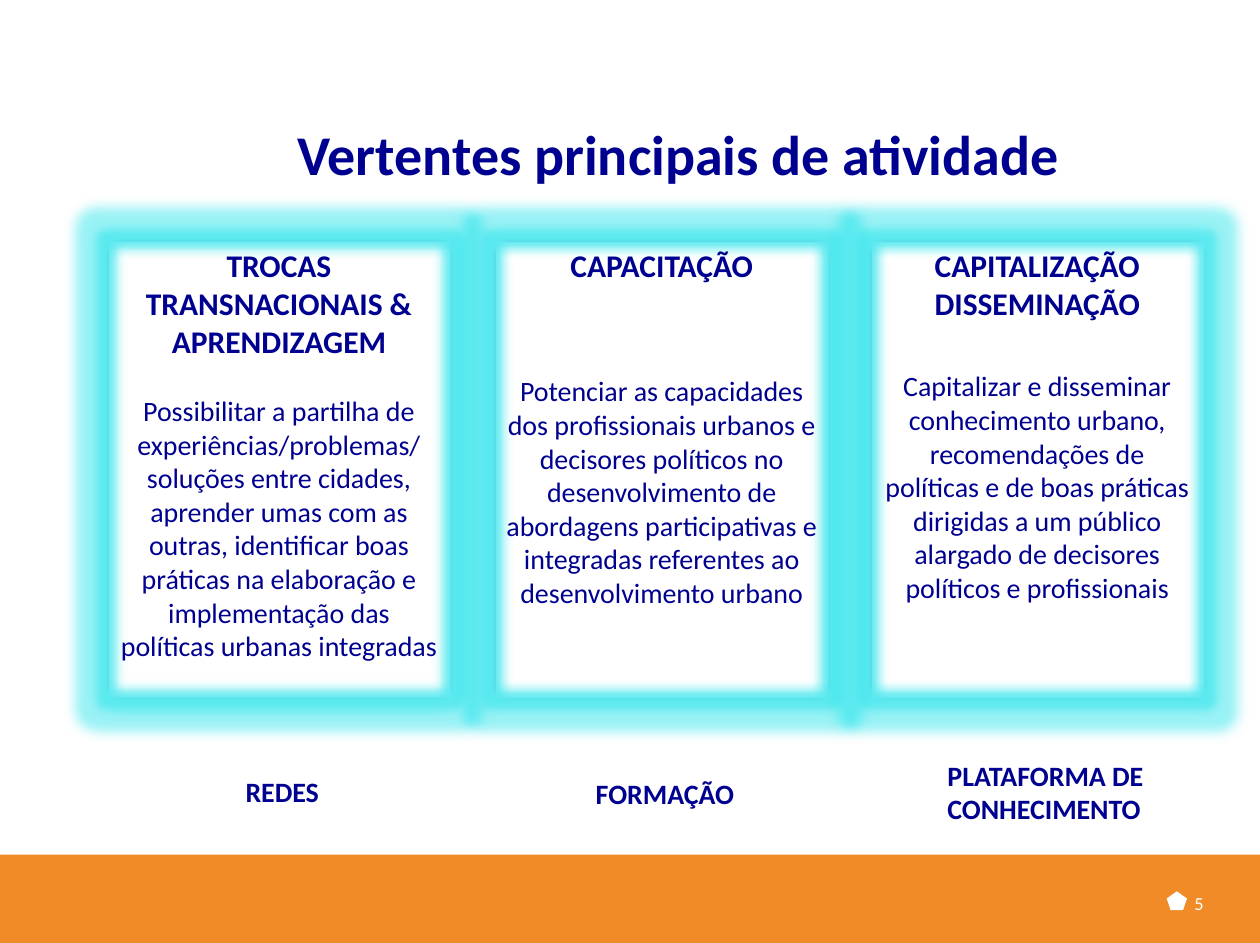
import pptx
import pptx.util
import pptx.dml.color
import pptx.enum.shapes
import pptx.enum.text
import pptx.oxml
import pptx.oxml.ns
from dataclasses import dataclass

Cm = pptx.util.Cm
Pt = pptx.util.Pt
SHAPE = pptx.enum.shapes.MSO_SHAPE
ALIGN = pptx.enum.text.PP_ALIGN
ANCHOR = pptx.enum.text.MSO_ANCHOR


@dataclass(frozen=True)
class Theme:
    font: str = "Calibri"
    navy: str = "000090"
    orange: str = "F08B27"
    white: str = "FFFFFF"
    glow: str = "00DFE8"
    border: str = "1E1E87"
    title: float = 32
    heading: float = 18
    body: float = 16
    number: float = 10.5


THEME = Theme()

# Heading lines, body paragraphs, gap before the body (pt), left and width (cm)
STRANDS = [
    (["TROCAS TRANSNACIONAIS & APRENDIZAGEM"],
     ["Possibilitar a partilha de experiências/problemas/",
      "soluções entre cidades, aprender umas com as outras, identificar boas "
      "práticas na elaboração e implementação das políticas urbanas integradas"],
     19.5, 2.16, 6.93),
    (["CAPACITAÇÃO"],
     ["Potenciar as capacidades dos profissionais urbanos e decisores políticos "
      "no desenvolvimento de abordagens participativas e integradas referentes "
      "ao desenvolvimento urbano"],
     51.5, 9.96, 6.76),
    (["CAPITALIZAÇÃO", "DISSEMINAÇÃO"],
     ["Capitalizar e disseminar conhecimento urbano, recomendações de políticas "
      "e de boas práticas dirigidas a um público alargado de decisores políticos "
      "e profissionais"],
     27, 17.53, 6.76),
]

# Text, left, top, width, height (cm), wraps
OUTCOMES = [
    ("REDES", 4.7, 15.47, 2.01, 0.94, False),
    ("FORMAÇÃO", 11.76, 15.52, 3.35, 0.94, False),
    ("PLATAFORMA DE CONHECIMENTO", 18.85, 15.14, 5.23, 1.63, True),
]


def rgb(value):
    return pptx.dml.color.RGBColor.from_string(value)


def style(paragraph, size, color, bold=False, align=ALIGN.LEFT):
    paragraph.alignment = align
    font = paragraph.font
    font.name, font.size, font.bold = THEME.font, Pt(size), bold
    font.color.rgb = rgb(color)


def add_filled(slide, preset, left, top, width, height, color):
    shape = slide.shapes.add_shape(preset, Cm(left), Cm(top), Cm(width), Cm(height))
    shape.shadow.inherit = False
    shape.fill.solid()
    shape.fill.fore_color.rgb = rgb(color)
    shape.line.fill.background()
    return shape


def add_glow(shape, radius, soft_edge):
    """Put a cyan glow behind the shape and fade its own edge."""
    properties = shape.element.spPr
    properties.remove(properties.find(pptx.oxml.ns.qn("a:effectLst")))
    properties.append(pptx.oxml.parse_xml(
        f'<a:effectLst {pptx.oxml.ns.nsdecls("a")}>'
        f'<a:glow rad="{Pt(radius)}"><a:srgbClr val="{THEME.glow}">'
        f'<a:alpha val="40000"/></a:srgbClr></a:glow>'
        f'<a:softEdge rad="{Pt(soft_edge)}"/></a:effectLst>'))


def add_label(slide, text, left, top, width, height, size, color, bold=True,
              align=ALIGN.LEFT, anchor=ANCHOR.TOP, wrap=True, inset=True):
    label = slide.shapes.add_textbox(Cm(left), Cm(top), Cm(width), Cm(height))
    frame = label.text_frame
    frame.word_wrap = wrap
    frame.vertical_anchor = anchor
    if not inset:
        frame.margin_left = frame.margin_right = 0
        frame.margin_top = frame.margin_bottom = 0
    frame.text = text
    style(frame.paragraphs[0], size, color, bold, align)


def add_strand(slide, headings, body, gap, left, width):
    card = add_filled(slide, SHAPE.RECTANGLE, left, 4.83, width, 9.25, THEME.white)
    card.line.color.rgb = rgb(THEME.border)
    card.line.width = Pt(2)
    add_glow(card, radius=14, soft_edge=6)
    frame = card.text_frame
    frame.word_wrap = True
    frame.vertical_anchor = ANCHOR.TOP
    frame.text = "\n".join(headings + body)
    for index, paragraph in enumerate(frame.paragraphs):
        is_heading = index < len(headings)
        style(paragraph, THEME.heading if is_heading else THEME.body,
              THEME.navy, is_heading, ALIGN.CENTER)
    frame.paragraphs[len(headings)].space_before = Pt(gap)


def add_footer(slide):
    add_filled(slide, SHAPE.RECTANGLE, 0, 17.22, 25.5, 1.78, THEME.orange)
    add_filled(slide, SHAPE.REGULAR_PENTAGON, 23.52, 17.96, 0.41, 0.38, THEME.white)
    add_label(slide, "5", 24.08, 17.68, 1.02, 1.02, THEME.number, THEME.white,
              bold=False, anchor=ANCHOR.MIDDLE, inset=False)


def main():
    deck = pptx.Presentation()
    deck.slide_width, deck.slide_height = Cm(25.4), Cm(19)
    slide = deck.slides.add_slide(deck.slide_layouts[6])

    # Footer band with the page number
    add_footer(slide)

    # Three strands of activity
    for strand in STRANDS:
        add_strand(slide, *strand)

    # What each strand leads to
    for text, left, top, width, height, wrap in OUTCOMES:
        add_label(slide, text, left, top, width, height, THEME.body, THEME.navy,
                  anchor=ANCHOR.MIDDLE, wrap=wrap)

    # Title
    add_label(slide, "Vertentes principais de atividade", 2.77, 2.41, 21.82, 1.37,
              THEME.title, THEME.navy, align=ALIGN.CENTER, inset=False)

    deck.save("out.pptx")


if __name__ == "__main__":
    main()
